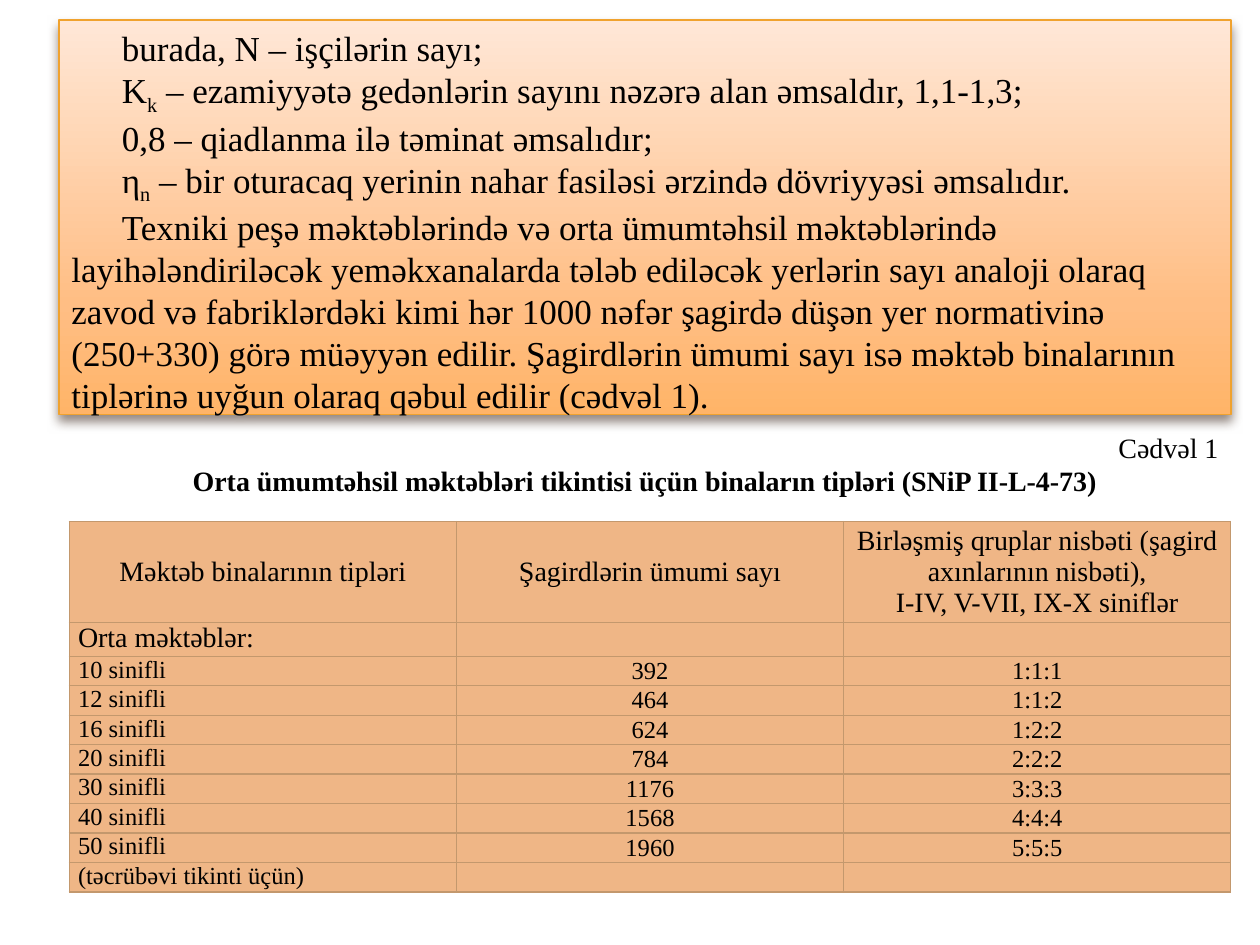
import pptx
import pptx.dml.color
import pptx.enum.shapes
import pptx.enum.text
import pptx.oxml
import pptx.oxml.ns
import pptx.util

Pt = pptx.util.Pt
ALIGN = pptx.enum.text.PP_ALIGN
ANCHOR = pptx.enum.text.MSO_ANCHOR
NS = pptx.oxml.ns.nsdecls("a")
qn = pptx.oxml.ns.qn

COLORS = {
    "text": "000000",
    "panel_top": "FFE7D7",
    "panel_middle": "FFBE84",
    "panel_bottom": "FFB468",
    "panel_line": "F0A22E",
    "shadow": "4E3B30",
    "cell": "EFB686",
    "border": "C3986D",
}

DEFINITIONS = [
    [("burada, N – işçilərin sayı;", False)],
    [("K", False), ("k", True),
     (" – ezamiyyətə gedənlərin sayını nəzərə alan əmsaldır, 1,1-1,3;", False)],
    [("0,8 – qiadlanma ilə təminat əmsalıdır;", False)],
    [("η", False), ("n", True),
     (" – bir oturacaq yerinin nahar fasiləsi ərzində dövriyyəsi əmsalıdır.", False)],
    [("Texniki peşə məktəblərində və orta ümumtəhsil məktəblərində "
      "layihələndiriləcək yeməkxanalarda tələb ediləcək yerlərin sayı analoji olaraq "
      "zavod və fabriklərdəki kimi hər 1000 nəfər şagirdə düşən yer normativinə "
      "(250+330) görə müəyyən edilir. Şagirdlərin ümumi sayı isə məktəb binalarının "
      "tiplərinə uyğun olaraq qəbul edilir (cədvəl 1).", False)],
]

SCHOOL_ROWS = [
    ["Məktəb binalarının tipləri", "Şagirdlərin ümumi sayı",
     "Birləşmiş qruplar nisbəti (şagird axınlarının nisbəti),\nI-IV, V-VII, IX-X siniflər"],
    ["Orta məktəblər:", "", ""],
    ["10 sinifli", "392", "1:1:1"],
    ["12 sinifli", "464", "1:1:2"],
    ["16 sinifli", "624", "1:2:2"],
    ["20 sinifli", "784", "2:2:2"],
    ["30 sinifli", "1176", "3:3:3"],
    ["40 sinifli", "1568", "4:4:4"],
    ["50 sinifli", "1960", "5:5:5"],
    ["(təcrübəvi tikinti üçün)", "", ""],
]


def rgb(name):
    return pptx.dml.color.RGBColor.from_string(COLORS[name])


class SlideBuilder:
    font_name = "Times New Roman"
    line_width = 0.79

    def __init__(self, slide):
        self.s = slide

    def style(self, r, size, bold=False):
        r.font.name = self.font_name
        r.font.size = Pt(size)
        r.font.bold = bold
        r.font.color.rgb = rgb("text")

    def panel(self, box, paragraphs, size, indent):
        sp = self.s.shapes.add_shape(
            pptx.enum.shapes.MSO_SHAPE.RECTANGLE, *map(Pt, box))
        sp.line.color.rgb = rgb("panel_line")
        sp.line.width = Pt(self.line_width)
        self.gradient(sp, [("panel_top", 0), ("panel_middle", 72), ("panel_bottom", 100)])
        self.shadow(sp, blur=6, distance=4, opacity=60)
        tf = sp.text_frame
        tf.word_wrap = True
        tf.vertical_anchor = ANCHOR.TOP
        for i, parts in enumerate(paragraphs):
            p = tf.paragraphs[0] if i == 0 else tf.add_paragraph()
            p.alignment = ALIGN.LEFT
            p._p.get_or_add_pPr().set("indent", str(Pt(indent)))
            for text, subscript in parts:
                r = p.add_run()
                r.text = text
                self.style(r, size)
                if subscript:
                    r.font._element.set("baseline", "-25000")

    def gradient(self, sp, stops):
        sp.fill.gradient()
        sp.fill.gradient_angle = 270
        stop_list = sp._element.spPr.find(".//" + qn("a:gsLst"))
        for stop in list(stop_list):
            stop_list.remove(stop)
        for name, percent in stops:
            stop_list.append(pptx.oxml.parse_xml(
                f'<a:gs {NS} pos="{percent * 1000}">'
                f'<a:srgbClr val="{COLORS[name]}"/></a:gs>'))

    def shadow(self, sp, blur, distance, opacity):
        sp.shadow.inherit = False
        sp._element.spPr.find(qn("a:effectLst")).append(pptx.oxml.parse_xml(
            f'<a:outerShdw {NS} blurRad="{Pt(blur)}" dist="{Pt(distance)}" '
            f'dir="5400000" rotWithShape="0"><a:srgbClr val="{COLORS["shadow"]}">'
            f'<a:alpha val="{opacity * 1000}"/></a:srgbClr></a:outerShdw>'))

    def caption(self, box, lines, size):
        tf = self.s.shapes.add_textbox(*map(Pt, box)).text_frame
        tf.word_wrap = True
        tf.vertical_anchor = ANCHOR.MIDDLE
        tf.text = "\n".join(text for text, _, _ in lines)
        for p, (_, align, bold) in zip(tf.paragraphs, lines):
            p.alignment = align
            self.style(p.runs[0], size, bold)

    def table(self, box, rows, heights, sizes):
        tbl = self.s.shapes.add_table(len(rows), len(rows[0]), *map(Pt, box)).table
        for row, height in zip(tbl.rows, heights):
            row.height = Pt(height)
        for i, texts in enumerate(rows):
            for j, text in enumerate(texts):
                centred = i == 0 or j > 0
                self.cell(tbl.cell(i, j), text, sizes[i], centred)

    def cell(self, cell, text, size, centred):
        cell.fill.solid()
        cell.fill.fore_color.rgb = rgb("cell")
        cell.margin_left = cell.margin_right = Pt(5)
        cell.margin_top = cell.margin_bottom = 0
        cell.vertical_anchor = ANCHOR.MIDDLE if centred else ANCHOR.TOP
        cell.text_frame.text = text
        for p in cell.text_frame.paragraphs:
            p.alignment = ALIGN.CENTER if centred else ALIGN.LEFT
            for r in p.runs:
                self.style(r, size)
            if not p.runs:
                p._p.append(pptx.oxml.parse_xml(
                    f'<a:endParaRPr {NS} sz="{size * 100}">'
                    f'<a:latin typeface="{self.font_name}"/></a:endParaRPr>'))
        for i, side in enumerate("LRTB"):
            cell._tc.tcPr.insert(i, pptx.oxml.parse_xml(
                f'<a:ln{side} {NS} w="{Pt(self.line_width)}"><a:solidFill>'
                f'<a:srgbClr val="{COLORS["border"]}"/></a:solidFill></a:ln{side}>'))


def main():
    prs = pptx.Presentation()
    prs.slide_width, prs.slide_height = Pt(720), Pt(540)
    builder = SlideBuilder(prs.slides.add_slide(prs.slide_layouts[6]))
    builder.panel((33.8, 11.5, 669.6, 225.4), DEFINITIONS, size=20, indent=28.8)
    builder.caption((33.8, 241.9, 669.6, 46), [
        ("Cədvəl 1", ALIGN.RIGHT, False),
        ("Orta ümumtəhsil məktəbləri tikintisi üçün binaların tipləri (SNiP II-L-4-73)",
         ALIGN.CENTER, True),
    ], size=16)
    builder.table((39.6, 298, 663.8, 211), SCHOOL_ROWS,
                  heights=[57.6, 19.4] + [16.8] * 8, sizes=[16] * 2 + [14] * 8)
    prs.save("out.pptx")


if __name__ == "__main__":
    main()
